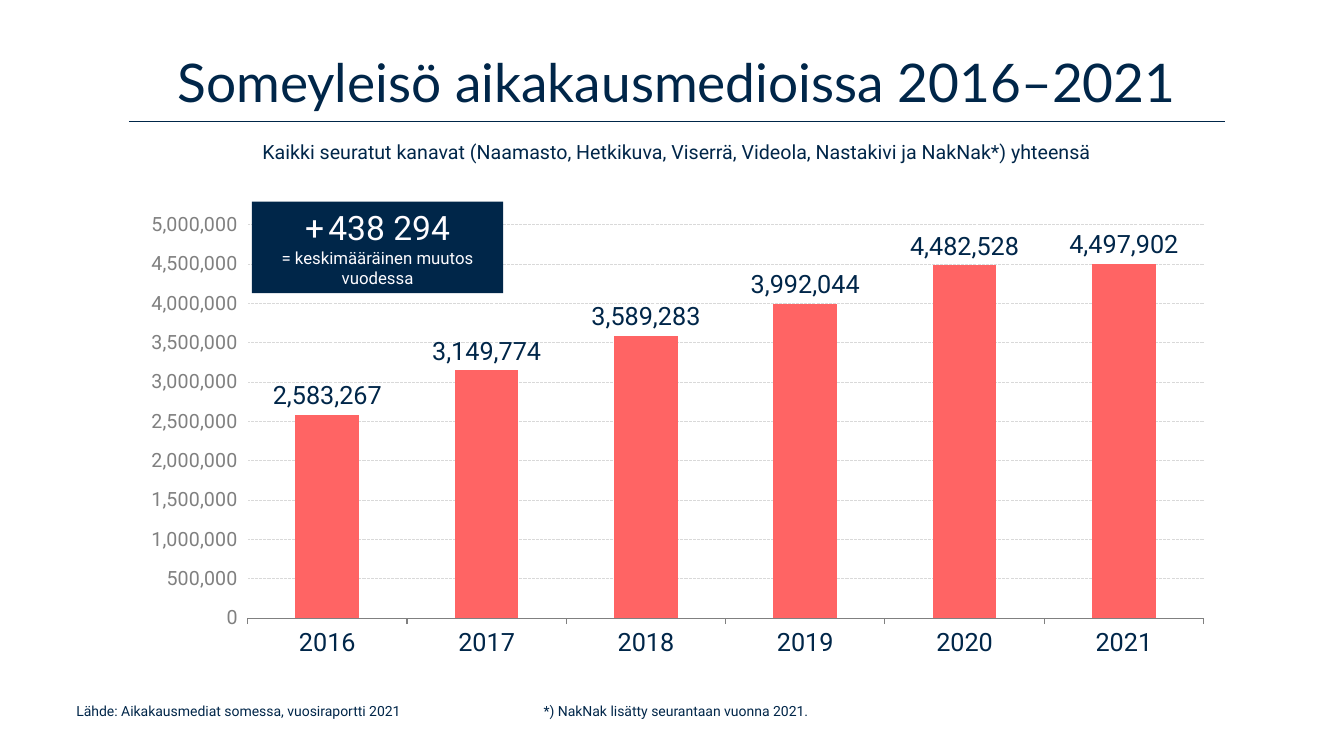
from lxml import etree
from pptx import Presentation
from pptx import util as u
from pptx.chart.data import CategoryChartData
from pptx.dml.color import RGBColor
from pptx.enum import chart as ch, dml, shapes, text
from pptx.oxml import parse_xml
from pptx.oxml.ns import nsdecls, qn

NAVY = RGBColor(0x00, 0x26, 0x49)
CORAL = RGBColor(0xFF, 0x64, 0x64)
GREY = RGBColor(0x80, 0x80, 0x80)
PALE = RGBColor(0xD9, 0xD9, 0xD9)
WHITE = RGBColor(0xFE, 0xFC, 0xFF)

COLUMNS, ROWS = 32, 18
LEFT, WIDTH = 3.07, 26.09
FOOT_ROW = 16.61
CENTER = text.PP_ALIGN.CENTER

AUDIENCE = {
    "2016": 2583267,
    "2017": 3149774,
    "2018": 3589283,
    "2019": 3992044,
    "2020": 4482528,
    "2021": 4497902,
}


def assign(target, **values):
    for key, value in values.items():
        setattr(target, key, value)


class AudienceSlide:
    """Draws styled elements on a slide divided into columns and rows."""

    def __init__(self, deck):
        self.column = deck.slide_width / COLUMNS
        self.row = deck.slide_height / ROWS
        self.slide = deck.slides.add_slide(deck.slide_layouts[6])

    def place(self, left, top, width, height):
        return (round(left * self.column), round(top * self.row),
                round(width * self.column), round(height * self.row))

    def style(self, font, size, color=NAVY, name="Roboto"):
        assign(font, size=u.Pt(size), name=name, bold=False)
        font.color.rgb = color

    def add_words(self, paragraph, words, size, color=NAVY, name="Roboto"):
        run = paragraph.add_run()
        run.text = words
        self.style(run.font, size, color, name)
        return run

    def label(self, area, words, size, name="Roboto", frame=None, **layout):
        box = self.slide.shapes.add_textbox(*self.place(*area))
        assign(box.text_frame, word_wrap=True, **(frame or {}))
        paragraph = box.text_frame.paragraphs[0]
        assign(paragraph, **layout)
        self.add_words(paragraph, words, size, name=name)

    def rule(self, left, top, width):
        x, y, length, _ = self.place(left, top, width, 0)
        line = self.slide.shapes.add_connector(
            shapes.MSO_CONNECTOR.STRAIGHT, x, y, x + length, y)
        line.line.color.rgb = NAVY
        line.line.width = u.Pt(1)
        etree.SubElement(line._element.spPr, qn("a:effectLst"))

    def callout(self, area, sign, amount, meaning):
        panel = self.slide.shapes.add_shape(
            shapes.MSO_SHAPE.RECTANGLE, *self.place(*area))
        panel.shadow.inherit = False
        panel.fill.solid()
        panel.fill.fore_color.rgb = NAVY
        panel.line.fill.background()
        assign(panel.text_frame, word_wrap=True,
               vertical_anchor=text.MSO_ANCHOR.MIDDLE)
        paragraph = panel.text_frame.paragraphs[0]
        paragraph.alignment = CENTER
        plus = self.add_words(paragraph, sign, 24, WHITE)
        plus.font._element.set("spc", "300")
        self.add_words(paragraph, amount, 24, WHITE)
        paragraph.add_line_break()
        self.add_words(paragraph, meaning, 12, WHITE)

    def columns(self, area, name, values, plot_area):
        data = CategoryChartData(number_format="#,##0")
        data.categories = list(values)
        data.add_series(name, list(values.values()))
        chart = self.slide.shapes.add_chart(
            ch.XL_CHART_TYPE.COLUMN_CLUSTERED, *self.place(*area), data).chart
        assign(chart, has_legend=False, has_title=False)
        self.style(chart.font, 18)

        plot = chart.plots[0]
        assign(plot, gap_width=150, vary_by_categories=False,
               has_data_labels=True)
        bars = plot.series[0].format.fill
        bars.solid()
        bars.fore_color.rgb = CORAL
        assign(plot.data_labels, show_value=True, number_format="#,##0",
               number_format_is_linked=False,
               position=ch.XL_LABEL_POSITION.OUTSIDE_END)
        self.style(plot.data_labels.font, 18)

        years = chart.category_axis
        years.major_tick_mark = ch.XL_TICK_MARK.OUTSIDE
        self.style(years.tick_labels.font, 18)
        years.format.line.color.rgb = GREY
        years.format.line.width = u.Pt(0.75)

        scale = chart.value_axis
        assign(scale, minimum_scale=0, maximum_scale=5000000,
               major_unit=500000, has_major_gridlines=True,
               major_tick_mark=ch.XL_TICK_MARK.OUTSIDE)
        assign(scale.tick_labels, number_format="#,##0",
               number_format_is_linked=False)
        self.style(scale.tick_labels.font, 14, GREY)
        scale.format.line.fill.background()
        grid = scale.major_gridlines.format.line
        grid.color.rgb = PALE
        assign(grid, width=u.Pt(0.75),
               dash_style=dml.MSO_LINE.SQUARE_DOT)
        self.fix_plot(chart, plot_area)

    def fix_plot(self, chart, plot_area):
        shares = "".join(f'<c:{key} val="{share}"/>'
                         for key, share in zip("xywh", plot_area))
        layout = parse_xml(
            f'<c:layout {nsdecls("c")}><c:manualLayout>'
            '<c:layoutTarget val="inner"/><c:xMode val="edge"/>'
            f'<c:yMode val="edge"/>{shares}</c:manualLayout></c:layout>')
        area = chart._chartSpace.chart.plotArea
        for automatic in area.findall(qn("c:layout")):
            area.remove(automatic)
        area.insert(0, layout)


def main():
    deck = Presentation()
    assign(deck, slide_width=u.Inches(13.33), slide_height=u.Inches(7.5))
    page = AudienceSlide(deck)
    page.rule(LEFT, 2.9, WIDTH)
    page.label((1.58, FOOT_ROW, 15.79, 1.06),
               "Lähde: Aikakausmediat somessa, vuosiraportti 2021", 10)
    page.label((LEFT, 1.18, WIDTH, 1.7),
               "Someyleisö aikakausmedioissa 2016–2021", 38, "Lato",
               {"vertical_anchor": text.MSO_ANCHOR.MIDDLE},
               alignment=CENTER, line_spacing=0.9)
    page.label((LEFT, 3.22, WIDTH, 0.82),
               "Kaikki seuratut kanavat (Naamasto, Hetkikuva, Viserrä, "
               "Videola, Nastakivi ja NakNak*) yhteensä",
               14, alignment=CENTER)
    page.columns((3.02, 4.8, 26.16, 11.02), "Series 1", AUDIENCE,
                 (0.11, 0.05, 0.87, 0.85))
    page.callout((6, 4.8, 5.98, 2.18), "+", "438 294",
                 "= keskimääräinen muutos vuodessa")
    page.label((8.35, FOOT_ROW, 15.48, 0.65),
               "*) NakNak lisätty seurantaan vuonna 2021.", 10,
               alignment=CENTER)
    deck.save("out.pptx")


if __name__ == "__main__":
    main()
